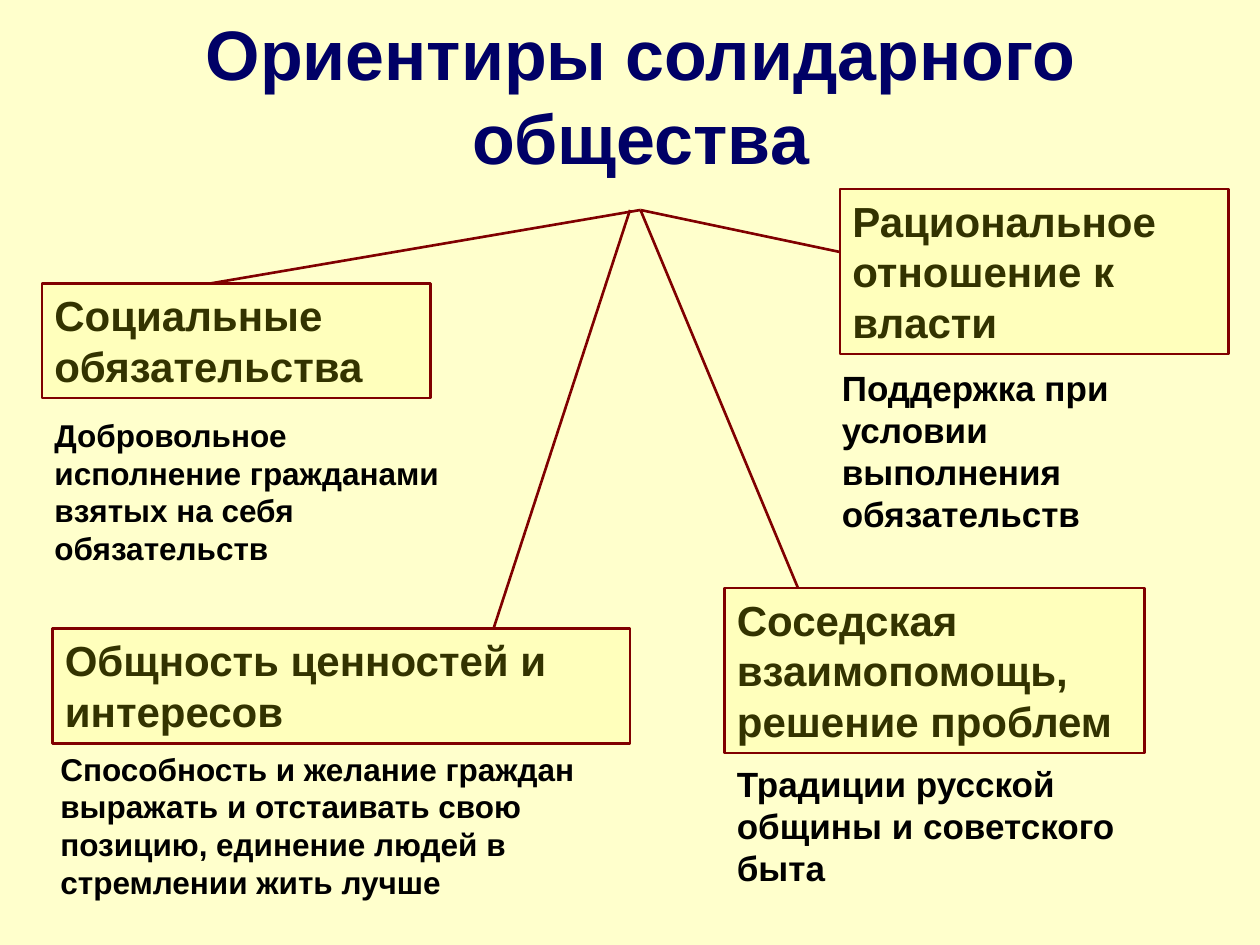
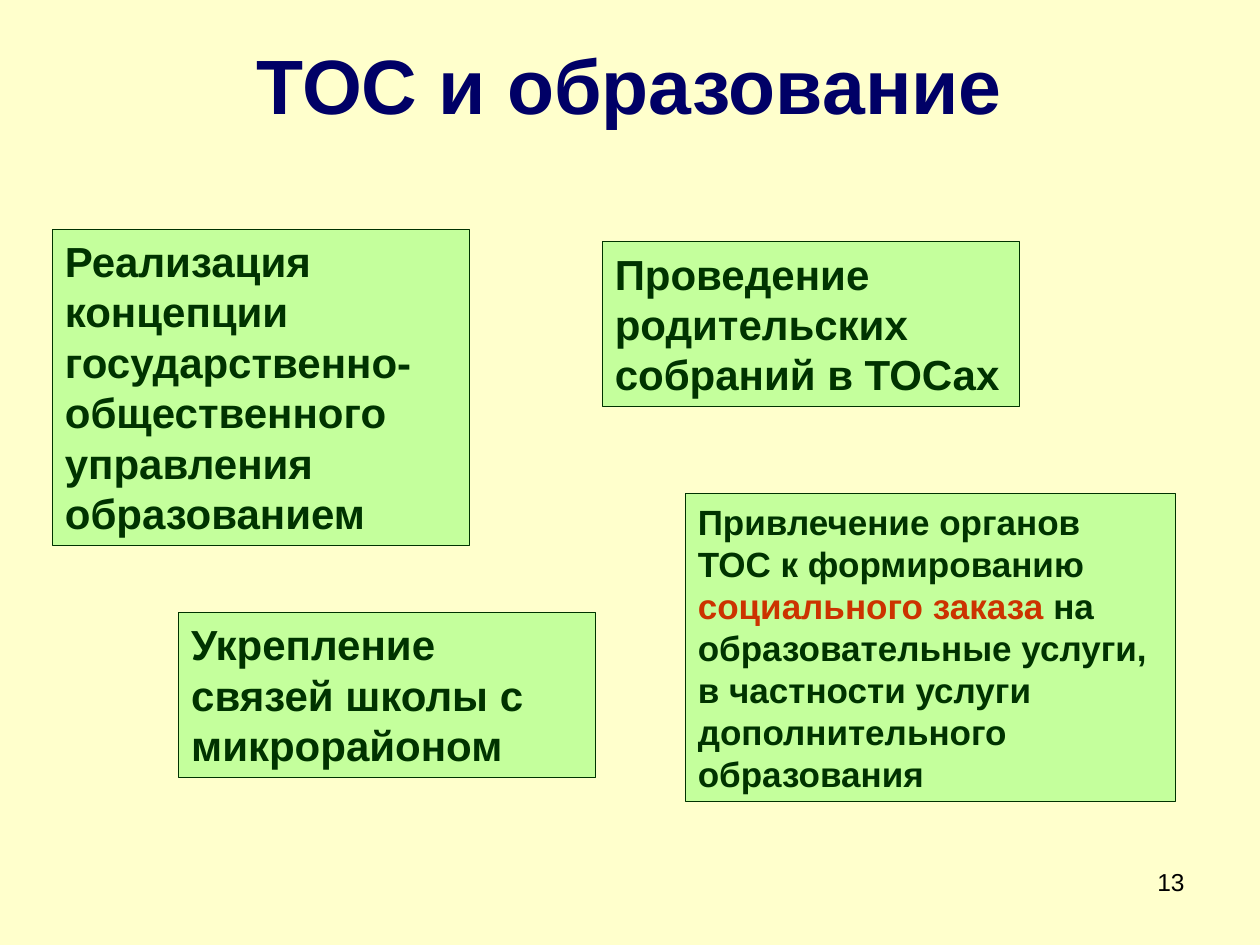
from dataclasses import dataclass

from lxml import etree
from pptx import Presentation
from pptx.dml.color import RGBColor
from pptx.enum import shapes, text
from pptx.oxml import ns
from pptx.util import Pt

FONT = "Arial"
BACKGROUND = "FFFFCC"
NAVY = "000066"
MAROON = "800000"
BLACK = "000000"
RED = "CC3300"
TITLE_ONLY = 5
LEFT = text.PP_ALIGN.LEFT
CENTER = text.PP_ALIGN.CENTER
RIGHT = text.PP_ALIGN.RIGHT
JUSTIFY = text.PP_ALIGN.JUSTIFY


@dataclass(frozen=True)
class BoxStyle:
    fill: str
    opacity: int
    line: str
    line_width: float
    font: str


@dataclass(frozen=True)
class Label:
    """A piece of text with its frame in points; highlight is the part shown in red."""
    words: str
    left: float
    top: float
    width: float
    height: float
    size: float = 24
    align: text.PP_ALIGN = LEFT
    highlight: str = ""
    bold: bool = True

    def frame(self) -> tuple:
        return Pt(self.left), Pt(self.top), Pt(self.width), Pt(self.height)


@dataclass(frozen=True)
class Ray:
    start_x: float
    end_x: float
    end_y: float


YELLOW_BOX = BoxStyle("FFFF99", 31, MAROON, 1.5, "333300")
GREEN_BOX = BoxStyle("00FF00", 23, "003300", 0.75, "003300")

SOLIDARITY_TITLE = Label("Ориентиры солидарного общества", 60, 12, 612, 84, 40, CENTER)
PRINCIPLES = [
    Label("Общность ценностей и интересов", 30, 359.3, 330, 65.5),
    Label("Социальные обязательства", 24, 162, 222, 65.5, align=JUSTIFY),
    Label("Соседская взаимопомощь, решение проблем", 414, 336, 240, 94.3, align=JUSTIFY),
    Label("Рациональное отношение к власти", 480, 108, 222, 94.3),
]
RAYS_TOP = 120
RAYS = [Ray(366, 120, 162), Ray(360, 282, 359.3), Ray(366, 456, 336), Ray(366, 480, 144)]
EXPLANATIONS = [
    Label("Добровольное исполнение гражданами взятых на себя обязательств",
          24, 234, 234, 94.3, 18),
    Label("Способность и желание граждан выражать и отстаивать свою позицию, "
          "единение людей в стремлении жить лучше", 27.4, 424.8, 332.6, 94.3, 18),
    Label("Традиции русской общины и советского быта", 414, 432, 282, 79.2, 20),
    Label("Поддержка при условии выполнения обязательств", 474, 205.9, 222, 104.4, 20),
]

EDUCATION_TITLE = Label("ТОС и образование", 0, 18, 720, 60, 44, CENTER)
PAGE_NUMBER = Label("13", 516, 492, 168, 37.5, 14, RIGHT, bold=False)
MEASURES = [
    Label("Реализация концепции государственно-общественного управления образованием",
          30, 131, 238.3, 180.7),
    Label("Проведение родительских собраний в ТОСах", 344.2, 138.2, 238.3, 94.3),
    Label("Привлечение органов ТОС к формированию социального заказа на образовательные "
          "услуги, в частности услуги дополнительного образования",
          391.7, 282.2, 280, 175.7, 20, highlight="социального заказа"),
    Label("Укрепление связей школы с микрорайоном", 102.2, 350, 238.3, 94.3),
]


def paint(color_owner, color: str) -> None:
    """Apply a hex colour to a fill, or to anything with a color."""
    if hasattr(color_owner, "solid"):
        color_owner.solid()
        color_owner.fore_color.rgb = RGBColor.from_string(color)
    else:
        color_owner.color.rgb = RGBColor.from_string(color)


def write(shape, label: Label, color: str, anchor=text.MSO_ANCHOR.TOP,
          fit=text.MSO_AUTO_SIZE.SHAPE_TO_FIT_TEXT) -> None:
    frame = shape.text_frame
    frame.word_wrap = True
    frame.auto_size = fit
    frame.vertical_anchor = anchor
    paragraph = frame.paragraphs[0]
    paragraph.alignment = label.align
    paragraph.font.name = FONT
    paragraph.font.size = Pt(label.size)
    paragraph.font.bold = label.bold
    paint(paragraph.font, color)
    if not label.highlight:
        paragraph.add_run().text = label.words
        return
    for part in label.words.partition(label.highlight):
        run = paragraph.add_run()
        run.text = part
        if part == label.highlight:
            paint(run.font, RED)


def add_titled_slide(presentation, title: Label):
    slide = presentation.slides.add_slide(presentation.slide_layouts[TITLE_ONLY])
    shape = slide.shapes.title
    shape.left, shape.top, shape.width, shape.height = title.frame()
    write(shape, title, NAVY, text.MSO_ANCHOR.MIDDLE, text.MSO_AUTO_SIZE.NONE)
    return slide


def add_box(slide, label: Label, style: BoxStyle) -> None:
    shape = slide.shapes.add_shape(shapes.MSO_SHAPE.RECTANGLE, *label.frame())
    shape.shadow.inherit = False
    paint(shape.fill, style.fill)
    color = shape.fill._xPr.find(".//" + ns.qn("a:srgbClr"))
    etree.SubElement(color, ns.qn("a:alpha"), val=str(style.opacity * 1000))
    paint(shape.line, style.line)
    shape.line.width = Pt(style.line_width)
    write(shape, label, style.font)


def add_text(slide, label: Label, fit=text.MSO_AUTO_SIZE.SHAPE_TO_FIT_TEXT) -> None:
    write(slide.shapes.add_textbox(*label.frame()), label, BLACK, fit=fit)


def add_ray(slide, ray: Ray) -> None:
    connector = slide.shapes.add_connector(
        shapes.MSO_CONNECTOR.STRAIGHT,
        Pt(ray.start_x), Pt(RAYS_TOP), Pt(ray.end_x), Pt(ray.end_y))
    paint(connector.line, MAROON)
    connector.line.width = Pt(1.5)
    etree.SubElement(connector._element.spPr, ns.qn("a:effectLst"))


def build_solidarity_slide(presentation) -> None:
    slide = add_titled_slide(presentation, SOLIDARITY_TITLE)
    for principle in PRINCIPLES:
        add_box(slide, principle, YELLOW_BOX)
    for ray in RAYS:
        add_ray(slide, ray)
    for explanation in EXPLANATIONS:
        add_text(slide, explanation)


def build_education_slide(presentation) -> None:
    slide = add_titled_slide(presentation, EDUCATION_TITLE)
    add_text(slide, PAGE_NUMBER, text.MSO_AUTO_SIZE.NONE)
    for measure in MEASURES:
        add_box(slide, measure, GREEN_BOX)


def main() -> None:
    presentation = Presentation()
    presentation.slide_width, presentation.slide_height = Pt(720), Pt(540)
    paint(presentation.slide_master.background.fill, BACKGROUND)
    build_solidarity_slide(presentation)
    build_education_slide(presentation)
    presentation.save("out.pptx")


if __name__ == "__main__":
    main()
